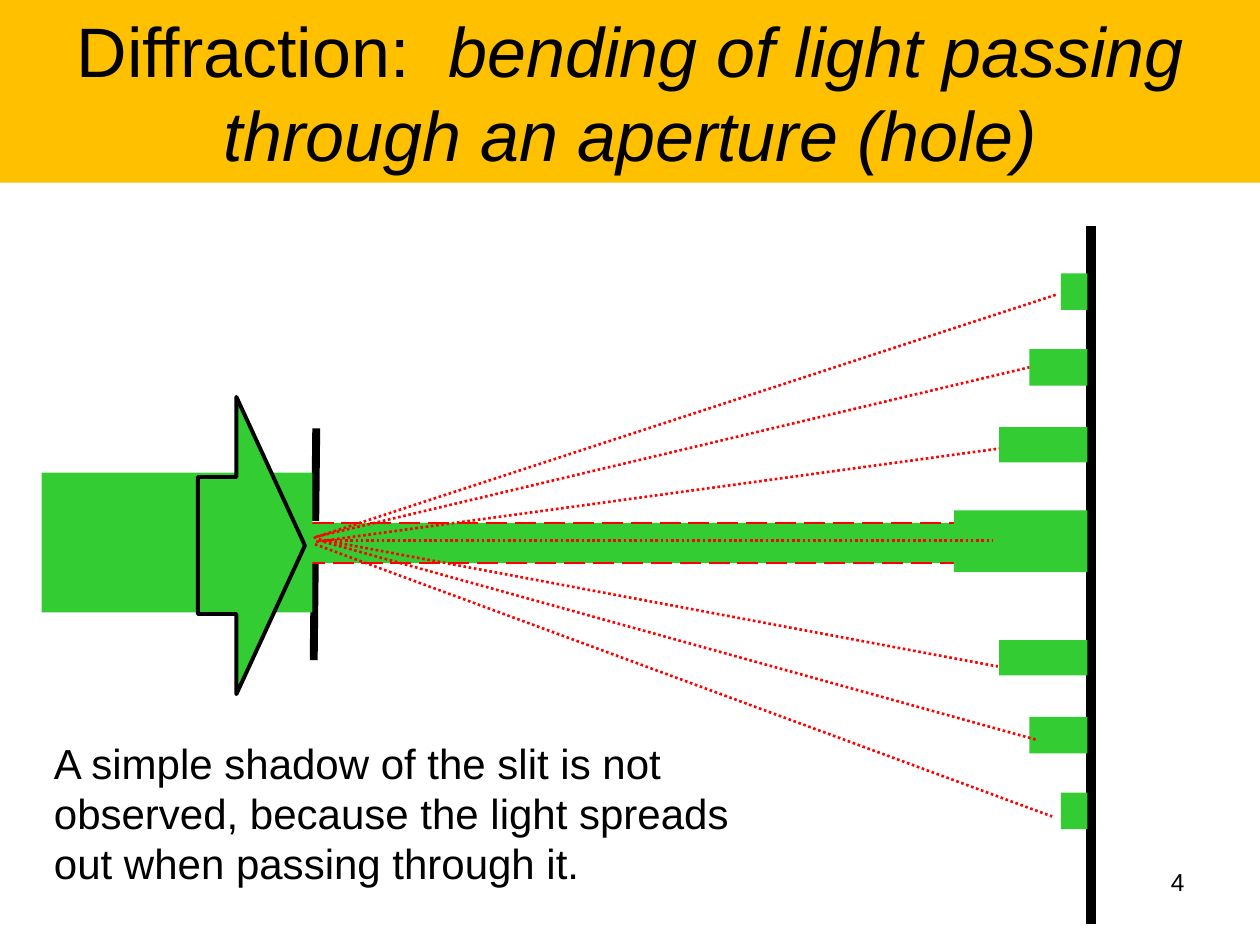
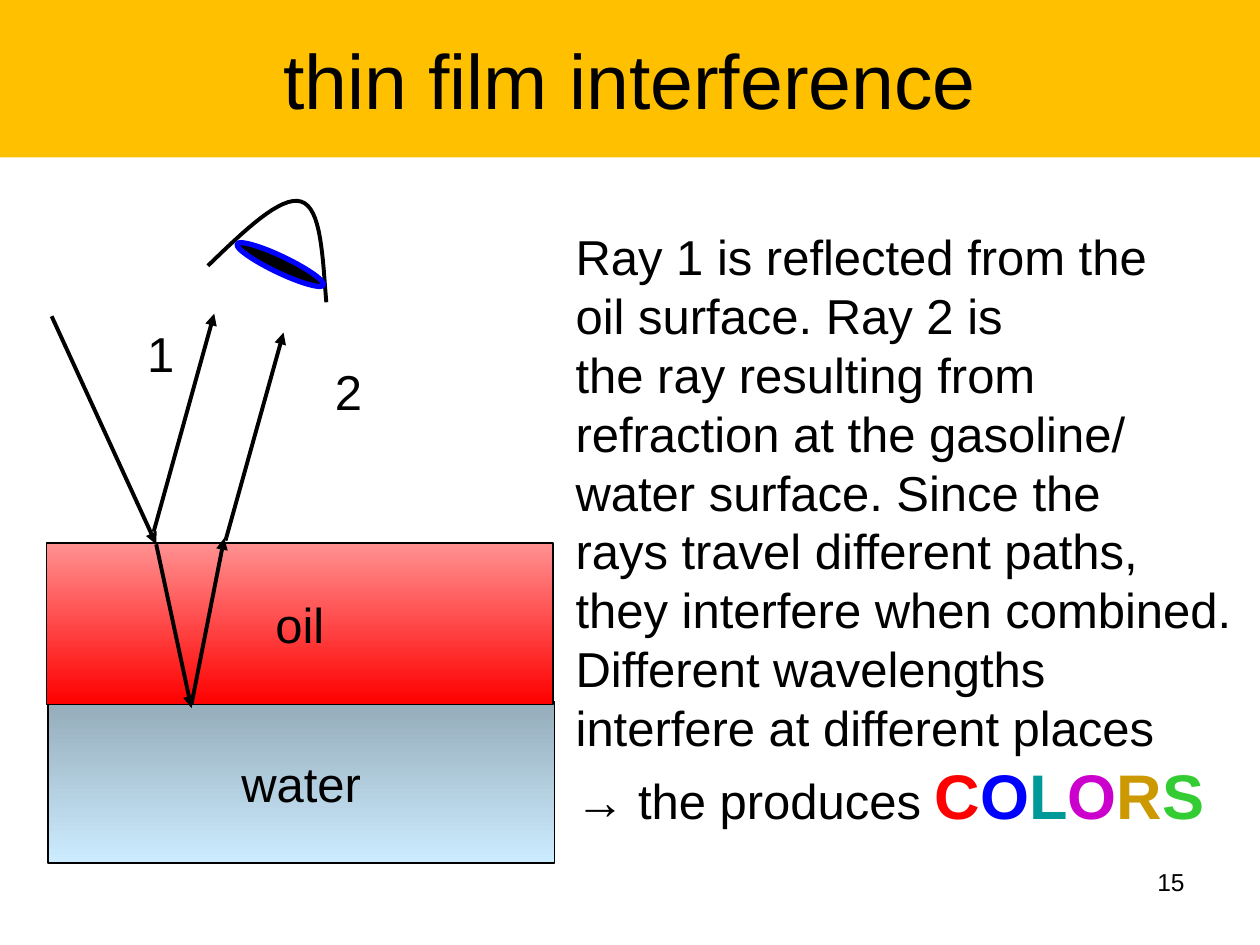
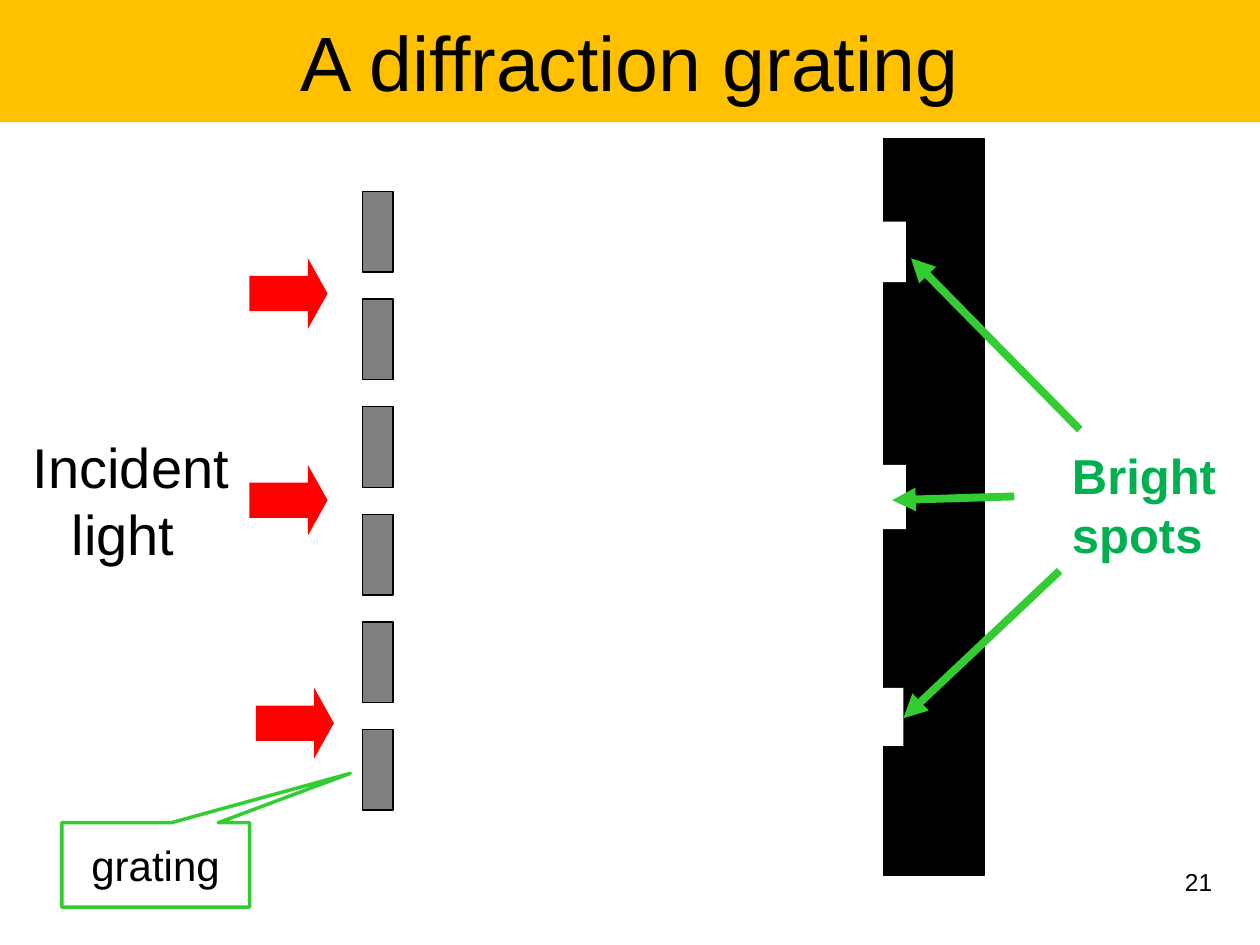
from pptx import Presentation, util as u
from pptx.dml.color import RGBColor
from pptx.enum import dml, shapes, text
from pptx.oxml.ns import qn
from lxml import etree

FONT = "Arial"
COLORS = {
    "band": "FFC000", "black": "000000", "white": "FFFFFF", "light": "33CC33",
    "red": "FF0000", "blue": "0000FF", "teal": "009999", "purple": "CC00CC",
    "ochre": "CC9900", "gray": "808080", "label": "00B050",
    "water_top": "95ACBA", "water_bottom": "CCECFF", "oil_top": "FF9191",
}
KIND = shapes.MSO_SHAPE
ALIGN = text.PP_ALIGN
DASH = dml.MSO_LINE

# Diffraction: spots as (top, width, height), all touching the screen
SCREEN_LEFT = 8.63
SPOTS = [(4.05, 1.06, 0.49), (3.39, 0.7, 0.28), (2.77, 0.46, 0.29), (2.17, 0.21, 0.29),
         (5.08, 0.7, 0.28), (5.69, 0.46, 0.29), (6.29, 0.21, 0.29)]
JOINED_SPOT = 2
JOINED_RAY = ((2.51, 4.26), (8.17, 2.92))
RAYS = [((2.51, 4.3), (7.93, 3.56)), ((2.53, 4.28), (7.92, 5.29)),
        ((2.57, 4.3), (8.22, 5.87)), ((2.49, 4.27), (8.38, 2.34)),
        ((2.5, 4.32), (8.35, 6.48)), ((2.53, 4.29), (7.88, 4.29))]
SHADOW_EDGES = [((2.48, 4.15), (8.6, 4.15)), ((2.41, 4.47), (8.54, 4.47))]
SHADOW_NOTE = ["A simple shadow of the slit is not",
               "observed, because the light spreads",
               "out when passing through it."]

# Thin film
LAYERS = [("water", (0.38, 5.57, 4.02, 1.28), ("water_top", "water_bottom")),
          ("oil", (0.37, 4.31, 4.02, 1.28), ("oil_top", "red"))]
FILM_RAYS = [((0.41, 2.51), (1.24, 4.32)), ((1.24, 4.32), (1.52, 5.62)),
             ((1.52, 5.59), (1.78, 4.27)), ((1.22, 4.22), (1.7, 2.49)),
             ((1.79, 4.29), (2.25, 2.64))]
RAY_LABELS = [("1", 1.07, 2.52), ("2", 2.56, 2.82)]
EYELID = [((1.65, 2.11), (1.94, 1.83), (2.23, 1.55), (2.39, 1.6)),
          ((2.39, 1.6), (2.55, 1.65), (2.56, 2.03), (2.59, 2.4))]
RAINBOW = zip("COLORS", ["red", "blue", "teal", "purple", "ochre", "light"])
FILM_NOTE = ["Ray 1 is reflected from the", "oil surface. Ray 2 is",
             "the ray resulting from", "refraction at the gasoline/",
             "water surface. Since the", "rays travel different paths,",
             "they interfere when combined.", "Different wavelengths",
             "interfere at different places",
             [("→ the produces ", {})]
             + [(letter, {"size": 36, "color": color, "bold": True})
                for letter, color in RAINBOW]]

# Grating
BAR_COUNT, FIRST_BAR, LAST_BAR = 6, 1.52, 5.79
INCIDENT_ARROWS = [(2.03, 5.46), (1.98, 2.05), (1.98, 3.69)]
BRIGHT_SPOTS = [(6.87, 3.69, 0.32, 0.51), (6.9, 1.76, 0.29, 0.48), (6.85, 5.46, 0.32, 0.46)]
POINTERS = [((8.05, 3.94), (7.08, 3.97)), ((8.57, 3.41), (7.23, 2.05)),
            ((8.41, 4.53), (7.17, 5.7))]


def rgb(name):
    return RGBColor.from_string(COLORS[name])


def write(box, lines, size=28, color="black", bold=False, align=ALIGN.LEFT,
          anchor=text.MSO_ANCHOR.TOP, wrap=False):
    """Fill a shape; each line is a string or a list of (text, format) spans."""
    frame = box.text_frame
    frame.word_wrap = wrap
    frame.vertical_anchor = anchor
    for index, line in enumerate(lines):
        para = frame.paragraphs[0] if index == 0 else frame.add_paragraph()
        para.alignment = align
        for words, style in [(line, {})] if isinstance(line, str) else line:
            span = para.add_run()
            span.text = words
            span.font.name = FONT
            span.font.size = u.Pt(style.get("size", size))
            span.font.bold = style.get("bold", bold)
            span.font.italic = style.get("italic", False)
            span.font.color.rgb = rgb(style.get("color", color))


def add_text(page, place, lines, **style):
    box = page.shapes.add_textbox(*map(u.Inches, place))
    write(box, lines, **style)
    return box


def paint(shape, fill=None, line=None, width=0.75):
    shape.shadow.inherit = False
    if fill:
        shape.fill.solid()
        shape.fill.fore_color.rgb = rgb(fill)
    else:
        shape.fill.background()
    if line:
        shape.line.color.rgb = rgb(line)
        shape.line.width = u.Pt(width)
    else:
        shape.line.fill.background()


def add_shape(page, place, fill=None, line=None, width=0.75, kind=KIND.RECTANGLE, adjust=()):
    shape = page.shapes.add_shape(kind, *map(u.Inches, place))
    for index, value in enumerate(adjust):
        shape.adjustments[index] = value
    paint(shape, fill, line, width)
    return shape


def add_line(page, ends, color="black", width=2.25, dash=None, arrow=False):
    (x1, y1), (x2, y2) = ends
    line = page.shapes.add_connector(shapes.MSO_CONNECTOR.STRAIGHT,
                                     *map(u.Inches, (x1, y1, x2, y2)))
    line.line.color.rgb = rgb(color)
    line.line.width = u.Pt(width)
    if dash:
        line.line.dash_style = dash
    properties = line._element.spPr
    if arrow:
        etree.SubElement(properties.find(qn("a:ln")), qn("a:tailEnd"), type="triangle")
    etree.SubElement(properties, qn("a:effectLst"))
    return line


def add_curve(page, segments, steps=16):
    """Draw an open outline through cubic curves given by four points each."""
    points = [segments[0][0]]
    for a, b, c, d in segments:
        for step in range(1, steps + 1):
            t = step / steps
            s = 1 - t
            points.append(tuple(s**3 * a[k] + 3 * s * s * t * b[k] + 3 * s * t * t * c[k]
                                + t**3 * d[k] for k in (0, 1)))
    points = [(u.Inches(x), u.Inches(y)) for x, y in points]
    builder = page.shapes.build_freeform(*points[0])
    builder.add_line_segments(points[1:], close=False)
    paint(builder.convert_to_shape(), line="black", width=2.25)


def start_page(deck, title, band_height, size=44):
    page = deck.slides.add_slide(deck.slide_layouts[6])
    band = add_shape(page, (0, 0, 10, band_height), "band")
    write(band, [title], size=size, align=ALIGN.CENTER,
          anchor=text.MSO_ANCHOR.MIDDLE, wrap=True)
    return page


def add_number(page, number, left=7.17):
    add_text(page, (left, 6.83, 2.33, 0.52), [number], size=14, align=ALIGN.RIGHT, wrap=True)


def diffraction(deck):
    title = [("Diffraction:  ", {}),
             ("bending of light passing through an aperture (hole)", {"italic": True})]
    page = start_page(deck, title, 1.45, size=40)
    add_line(page, ((2.49, 5.24), (2.51, 3.4)), width=4.5)
    add_shape(page, (2.46, 4.14, 0.08, 0.32), "white", "white")
    add_line(page, ((8.66, 1.79), (8.66, 7.33)), width=6)
    add_shape(page, (2.44, 4.15, 6.18, 0.32), "light")
    for edge in SHADOW_EDGES:
        add_line(page, edge, "red", 1.5, DASH.LONG_DASH)
    add_shape(page, (0.33, 3.75, 2.15, 1.11), "light")
    add_shape(page, (1.57, 3.15, 0.85, 2.36), "light", "black", 2.25,
              KIND.RIGHT_ARROW, (0.461, 0.64))
    spots = [add_shape(page, (SCREEN_LEFT - width, top, width, height), "light")
             for top, width, height in SPOTS]
    for ray in RAYS:
        add_line(page, ray, "red", 1.5, DASH.ROUND_DOT)
    joined = add_line(page, JOINED_RAY, "red", 1.5, DASH.ROUND_DOT)
    joined.end_connect(spots[JOINED_SPOT], 1)
    add_number(page, "4")
    add_text(page, (0.33, 5.8, 5.69, 1.31), SHADOW_NOTE, size=24)


def thin_film(deck):
    page = start_page(deck, "thin film interference", 1.25)
    for name, place, shades in LAYERS:
        layer = add_shape(page, place, line="black")
        layer.fill.gradient()
        layer.fill.gradient_angle = 270
        for stop, shade in zip(layer.fill.gradient_stops, shades):
            stop.color.rgb = rgb(shade)
        write(layer, [name], align=ALIGN.CENTER, anchor=text.MSO_ANCHOR.MIDDLE)
    for ray in FILM_RAYS:
        add_line(page, ray, arrow=True)
    add_curve(page, EYELID)
    pupil = add_shape(page, (2.16, 1.72, 0.13, 0.76), "black", "blue", 3, KIND.OVAL)
    pupil.rotation = 295.5
    for label, left, top in RAY_LABELS:
        add_text(page, (left, top, 0.42, 0.57), [label])
    add_text(page, (4.47, 1.75, 5.42, 5.51), FILM_NOTE)
    add_number(page, "15")


def grating(deck):
    page = start_page(deck, "A diffraction grating", 0.97)
    pitch = (LAST_BAR - FIRST_BAR) / (BAR_COUNT - 1)
    for index in range(BAR_COUNT):
        add_shape(page, (2.88, FIRST_BAR + index * pitch, 0.24, 0.64), "gray", "black")
    for left, top in INCIDENT_ARROWS:
        add_shape(page, (left, top, 0.62, 0.56), "red", kind=KIND.RIGHT_ARROW,
                  adjust=(0.5, 0.279))
    add_shape(page, (7.01, 1.1, 0.8, 5.85), "black", "black")
    for place in BRIGHT_SPOTS:
        add_shape(page, place, "white")
    add_text(page, (0.16, 3.38, 1.76, 1.28), ["Incident", "light "], size=32,
             align=ALIGN.CENTER)
    add_text(page, (8.41, 3.49, 1.36, 1.05), ["Bright", "spots"], color="label", bold=True)
    for pointer in POINTERS:
        add_line(page, pointer, "light", 4.5, arrow=True)
    add_number(page, "21", left=7.39)
    callout = add_shape(page, (0.49, 6.53, 1.49, 0.67), None, "light", 2,
                        KIND.RECTANGULAR_CALLOUT, (1.037, -1.085))
    write(callout, ["grating"], size=24, align=ALIGN.CENTER,
          anchor=text.MSO_ANCHOR.MIDDLE, wrap=True)


def main():
    deck = Presentation()
    deck.slide_width, deck.slide_height = u.Inches(10), u.Inches(7.5)
    for build in (diffraction, thin_film, grating):
        build(deck)
    deck.save("out.pptx")


if __name__ == "__main__":
    main()
